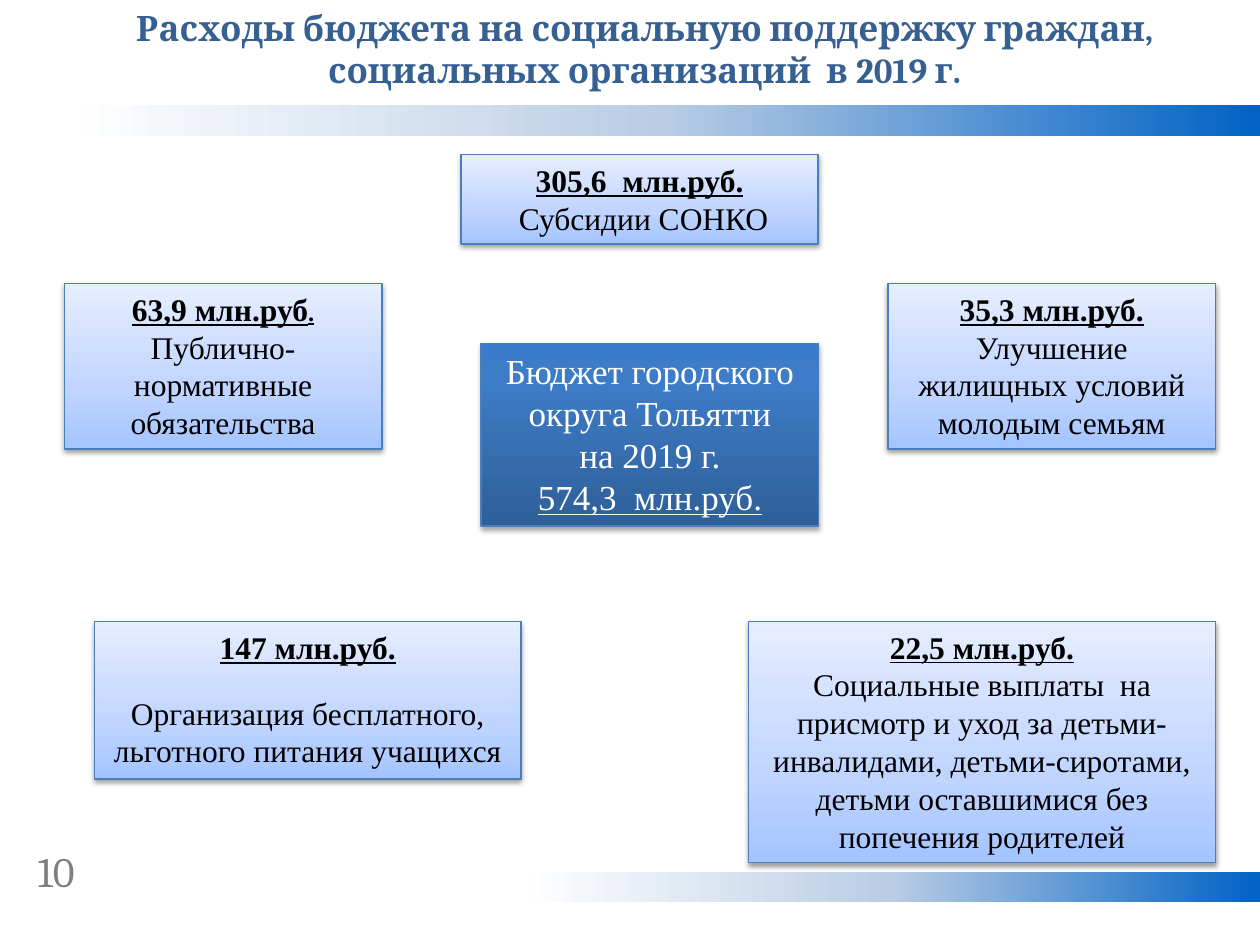
"""Build the slide on city budget spending for social support in 2019."""
from lxml.etree import SubElement
from pptx import Presentation
from pptx.dml.color import RGBColor
from pptx.enum.shapes import MSO_SHAPE
from pptx.enum.text import MSO_ANCHOR, MSO_AUTO_SIZE, PP_ALIGN
from pptx.oxml.ns import qn
from pptx.util import Pt

COLORS = {
    "title": "376092", "number": "808080", "text": "000000", "light": "FFFFFF",
    "border": "4B7EBC", "shadow": "000000",
}
BAND_STOPS = [(0, "0062C4"), (50, "B9CDE5"), (100, "FFFFFF")]
CARD_STOPS = [(0, "A4C4FF"), (35, "BFD4FF"), (100, "E6EEFF")]
CENTER_STOPS = [(0, "2F5F99"), (80, "3D7CC7"), (100, "3A7CCB")]
SLIDE_WIDTH, SLIDE_HEIGHT = 720, 540
BAND_HEIGHT = 17.3
BANDS = [(36.7, 60.2), (297.4, 498.2)]

TITLE = "Расходы бюджета на социальную поддержку граждан, социальных организаций  в 2019 г."
TITLE_BOX = (25.2, 0, 686.2, 55.7)
PAGE_NUMBER = "10"
NUMBER_BOX = (14.4, 479.5, 56.2, 36)
CENTER_LINES = ["Бюджет городского округа Тольятти", "на 2019 г.", "574,3  млн.руб."]
CENTER_BOX = (274.9, 196.2, 193, 104.4)
CARDS = [
    {"box": (36.7, 162, 181.6, 94.6), "amount": "63,9 млн.руб", "small_end": ".",
     "purpose": "Публично-нормативные обязательства"},
    {"box": (507.4, 162, 187.2, 94.6), "amount": "35,3 млн.руб.",
     "purpose": "Улучшение жилищных условий молодым семьям"},
    {"box": (263.5, 88.5, 204, 50.9), "amount": "305,6  млн.руб.",
     "purpose": " Субсидии СОНКО"},
    {"box": (427.8, 355.1, 266.7, 138), "amount": "22,5 млн.руб.",
     "purpose": "Социальные выплаты  на присмотр и уход за детьми-инвалидами, "
                "детьми-сиротами, детьми оставшимися без попечения родителей"},
    {"box": (54, 355.1, 243.7, 90), "amount": "147 млн.руб.", "gap": 16.1,
     "purpose": "Организация бесплатного, льготного питания учащихся"},
]


def rgb(name):
    return RGBColor.from_string(COLORS[name])


def add_rectangle(slide, box, stops, angle):
    shape = slide.shapes.add_shape(MSO_SHAPE.RECTANGLE, *map(Pt, box))
    shape.shadow.inherit = False
    shape.line.fill.background()
    shape.fill.gradient()
    shape.fill.gradient_angle = angle
    stop_list = shape._element.spPr.find(".//" + qn("a:gsLst"))
    for stop in list(stop_list):
        stop_list.remove(stop)
    for position, color in stops:
        stop = SubElement(stop_list, qn("a:gs"), pos=str(position * 1000))
        SubElement(stop, qn("a:srgbClr"), val=color)
    return shape


def add_panel(slide, box, stops, shadow_alpha, shadow_distance):
    shape = add_rectangle(slide, box, stops, 90)
    shape.line.color.rgb = rgb("border")
    shape.line.width = Pt(0.75)
    effects = shape._element.spPr.find(qn("a:effectLst"))
    shadow = SubElement(
        effects, qn("a:outerShdw"), blurRad=str(Pt(3.1)), dist=str(Pt(shadow_distance)),
        dir="5400000", rotWithShape="0")
    color = SubElement(shadow, qn("a:srgbClr"), val=COLORS["shadow"])
    SubElement(color, qn("a:alpha"), val=str(shadow_alpha * 1000))
    return prepare_frame(shape)


def add_text_box(slide, box):
    return prepare_frame(slide.shapes.add_textbox(*map(Pt, box)))


def prepare_frame(shape):
    frame = shape.text_frame
    frame.word_wrap = True
    frame.auto_size = MSO_AUTO_SIZE.SHAPE_TO_FIT_TEXT
    frame.vertical_anchor = MSO_ANCHOR.TOP
    return frame


def write(paragraph, text, size, color, name="Times New Roman", bold=False,
          underline=False, align=PP_ALIGN.CENTER):
    paragraph.alignment = align
    font = paragraph.font
    font.name, font.size, font.bold, font.underline = name, Pt(size), bold, underline
    font.color.rgb = rgb(color)
    run = paragraph.add_run()
    run.text = text
    run.font.color.rgb = rgb(color)


def add_card(slide, card):
    frame = add_panel(slide, card["box"], CARD_STOPS, 38, 1.6)
    heading = frame.paragraphs[0]
    write(heading, card["amount"], 18, "text", bold=True, underline=True)
    if "small_end" in card:
        run = heading.add_run()
        run.text = card["small_end"]
        run.font.size = Pt(14)
        run.font.color.rgb = rgb("text")
    purpose = frame.add_paragraph()
    if "gap" in card:
        purpose.space_before = Pt(card["gap"])
    write(purpose, card["purpose"], 18, "text")


def add_center(slide):
    frame = add_panel(slide, CENTER_BOX, CENTER_STOPS, 35, 1.8)
    for index, line in enumerate(CENTER_LINES):
        paragraph = frame.add_paragraph() if index else frame.paragraphs[0]
        write(paragraph, line, 20, "light", underline=line == CENTER_LINES[-1])


def main():
    presentation = Presentation()
    presentation.slide_width, presentation.slide_height = Pt(SLIDE_WIDTH), Pt(SLIDE_HEIGHT)
    slide = presentation.slides.add_slide(presentation.slide_layouts[6])
    for left, top in BANDS:
        add_rectangle(slide, (left, top, SLIDE_WIDTH - left, BAND_HEIGHT), BAND_STOPS, 180)
    number = add_text_box(slide, NUMBER_BOX).paragraphs[0]
    write(number, PAGE_NUMBER, 24, "number", name="Cambria", align=PP_ALIGN.LEFT)
    for card in CARDS:
        add_card(slide, card)
    add_center(slide)
    title = add_text_box(slide, TITLE_BOX).paragraphs[0]
    write(title, TITLE, 20, "title", name="Cambria", bold=True)
    presentation.save("out.pptx")


if __name__ == "__main__":
    main()
